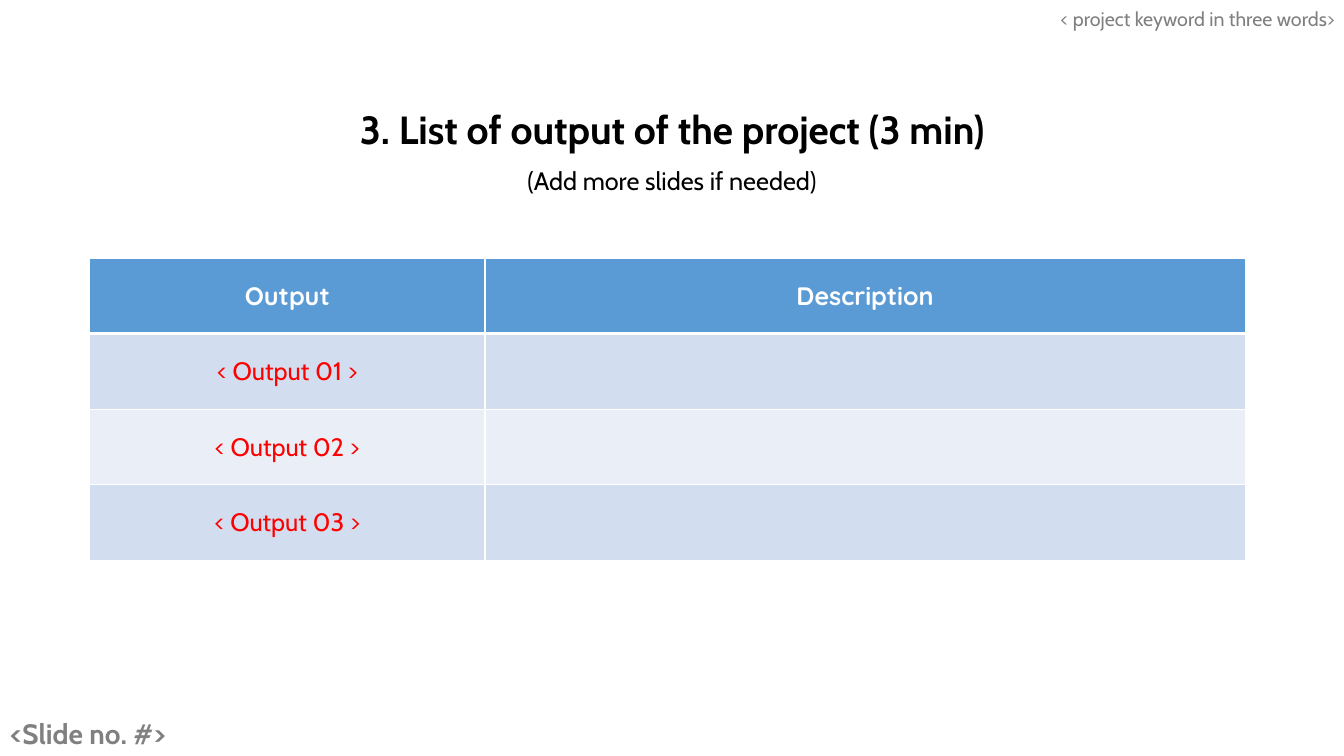
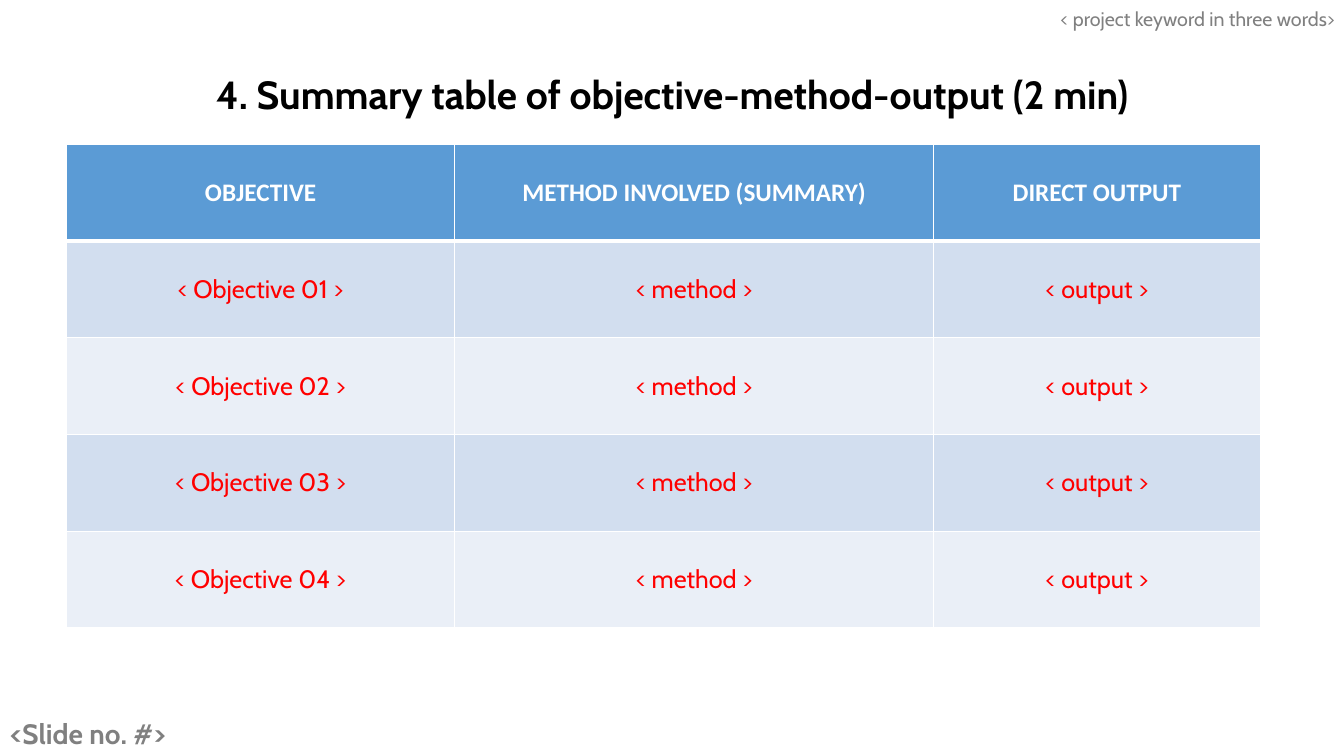
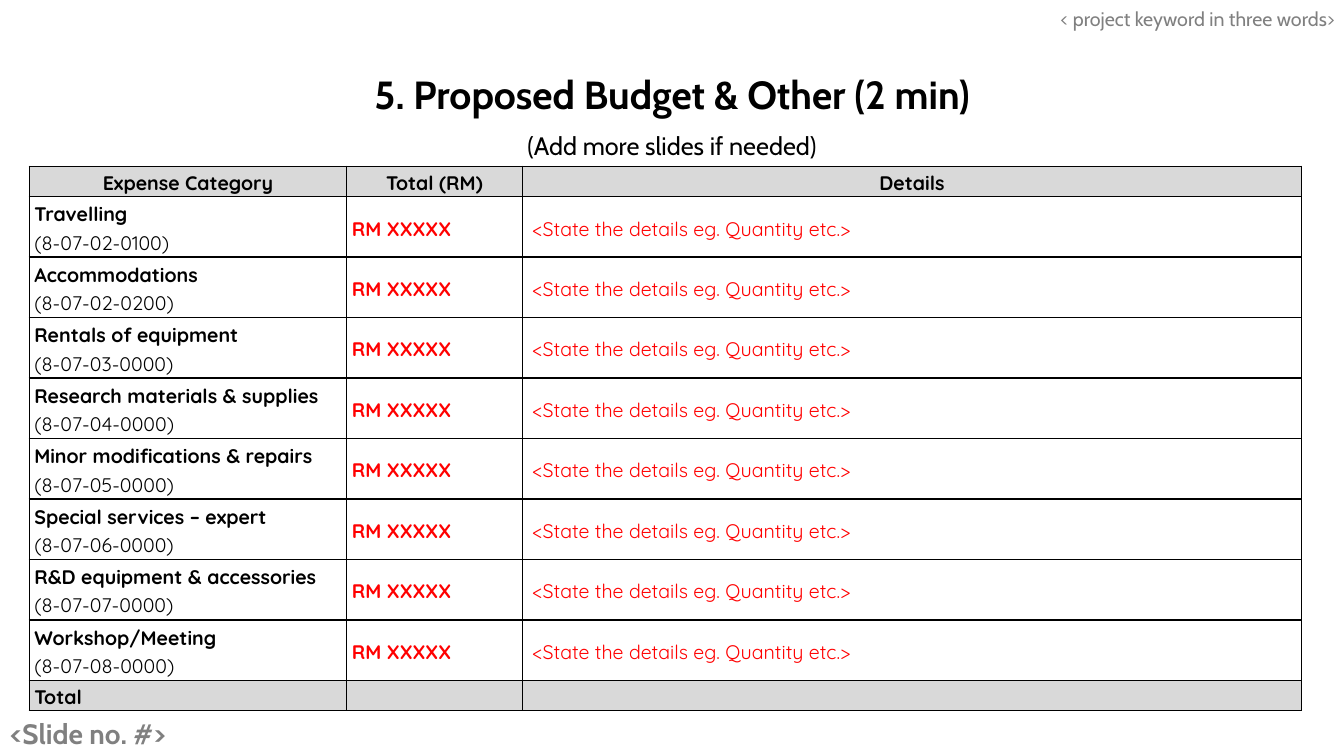
from lxml import etree
from pptx import Presentation
from pptx import util as u
from pptx.dml.color import RGBColor
from pptx.enum import text as t
from pptx.oxml import ns

LEFT, CENTER, RIGHT = t.PP_ALIGN.LEFT, t.PP_ALIGN.CENTER, t.PP_ALIGN.RIGHT
WHITE, BLACK, RED, GREY = "FFFFFF", "000000", "FF0000", "808080"
BLUE, LIGHT_BLUE, PALE_BLUE, SILVER = "5B9BD5", "D2DEEF", "EAEFF7", "D9D9D9"
TITLE_NOTE = "(Add more slides if needed)"


def rgb(hex_code):
    return RGBColor.from_string(hex_code)


def font_style(name, size, color, bold=False):
    return {"name": name, "size": u.Pt(size), "color": color, "bold": bold}


HEADING = font_style("Cabin", 28, BLACK, True)
NOTE = font_style("Cabin", 18, BLACK)
PAGE_MARK = font_style("Cabin", 20, GREY, True)
KEYWORD = font_style("Cabin", 14, GREY)
ENTRY = font_style("Cabin", 18, RED)
BUDGET_LABEL = font_style("Quicksand", 14, BLACK, True)
BUDGET_CODE = font_style("Quicksand", 14, BLACK)
BUDGET_SUM = font_style("Quicksand", 14, RED, True)
BUDGET_DETAIL = font_style("Quicksand", 14, RED)


class Deck:
    BOX_SPACING = {"line_spacing": 1.07, "space_after": u.Pt(8)}

    def __init__(self):
        self.prs = Presentation()
        self.prs.slide_width = u.Inches(13.33)
        self.prs.slide_height = u.Inches(7.5)
        self.slide = None

    def add_slide(self, top, *heading):
        """Start a slide with its title lines and the two marks all slides carry."""
        self.slide = self.prs.slides.add_slide(self.prs.slide_layouts[5])
        title = self.slide.shapes.title
        height = 0.61 if len(heading) == 1 else 1.04
        for side, inches in {"left": 0, "top": top, "width": 13.33, "height": height}.items():
            setattr(title, side, u.Inches(inches))
        self.fill_box(title.text_frame, list(zip(heading, (HEADING, NOTE))), CENTER)
        self.textbox(0, 7.04, 2.45, 0.46, "<Slide no. #>", PAGE_MARK, LEFT)
        self.textbox(4.91, 0, 8.43, 0.35, "< project keyword in three words>", KEYWORD, RIGHT)

    def textbox(self, left, top, width, height, wording, style, align):
        box = self.slide.shapes.add_textbox(*map(u.Inches, (left, top, width, height)))
        self.fill_box(box.text_frame, [(wording, style)], align)

    def fill_box(self, frame, lines, align):
        frame.word_wrap = True
        frame.auto_size = t.MSO_AUTO_SIZE.NONE
        frame.vertical_anchor = t.MSO_ANCHOR.TOP
        self.set_lines(frame, lines, align, self.BOX_SPACING)

    def set_lines(self, frame, lines, align, spacing):
        """Put each (wording, style) pair in a paragraph of its own."""
        for index, (wording, style) in enumerate(lines):
            paragraph = frame.paragraphs[0] if index == 0 else frame.add_paragraph()
            for key, value in {"alignment": align, **spacing}.items():
                setattr(paragraph, key, value)
            run = paragraph.add_run()
            run.text = wording
            for key, value in style.items():
                if key == "color":
                    run.font.color.rgb = rgb(value)
                else:
                    setattr(run.font, key, value)

    def table(self, left, top, widths, heights, rows, fills, body_align, border,
              header_rule=1, spacing=None, margins=None):
        """Draw rows of cells; a cell is a list of (wording, style) lines."""
        frame = self.slide.shapes.add_table(
            len(rows), len(widths),
            *map(u.Inches, (left, top, sum(widths), sum(heights))))
        grid = frame.table
        grid.first_row = grid.horz_banding = False
        for column, width in zip(grid.columns, widths):
            column.width = u.Inches(width)
        for r, (cells, height, fill) in enumerate(zip(rows, heights, fills)):
            grid.rows[r].height = u.Inches(height)
            rules = {"L": 1, "R": 1, "T": header_rule if r == 1 else 1,
                     "B": header_rule if r == 0 else 1}
            for c, lines in enumerate(cells):
                cell = grid.cell(r, c)
                cell.vertical_anchor = t.MSO_ANCHOR.MIDDLE
                for side, inches in (margins or {}).items():
                    setattr(cell, side, u.Inches(inches))
                if margins and r and c == len(widths) - 1:
                    cell.margin_left = u.Inches(0.1)
                align = CENTER if r == 0 else body_align
                self.set_lines(cell.text_frame, lines, align, spacing or {})
                if not lines:
                    ending = cell.text_frame.paragraphs[0]._p.get_or_add_endParaRPr()
                    ending.set("sz", "1400")
                if fill:
                    cell.fill.solid()
                    cell.fill.fore_color.rgb = rgb(fill)
                else:
                    cell.fill.background()
                self.border(cell, border, rules)

    @staticmethod
    def border(cell, color, rules):
        """Rule the cell's sides; lines must come before the fill in the XML."""
        properties = cell._tc.get_or_add_tcPr()
        for position, (side, points) in enumerate(rules.items()):
            line = etree.Element(ns.qn(f"a:ln{side}"), w=str(u.Pt(points)))
            solid = etree.SubElement(line, ns.qn("a:solidFill"))
            etree.SubElement(solid, ns.qn("a:srgbClr"), val=color)
            properties.insert(position, line)

    def banded_table(self, left, top, widths, row_height, header_font, header, entries):
        header_style = font_style(header_font, 18, WHITE, True)
        rows = [[[(label, header_style)] for label in header]]
        rows += [[[(entry, ENTRY)] if entry else [] for entry in row] for row in entries]
        bands = [LIGHT_BLUE if i % 2 == 0 else PALE_BLUE for i in range(len(entries))]
        self.table(left, top, widths, [row_height] * len(rows), rows, [BLUE] + bands,
                   CENTER, WHITE, header_rule=3)

    def budget_table(self, left, top, widths, header, expenses):
        rows = [[[(label, BUDGET_LABEL)] for label in header]]
        rows += [[[(category, BUDGET_LABEL), (f"({code})", BUDGET_CODE)],
                  [("RM XXXXX", BUDGET_SUM)],
                  [("<State the details eg. Quantity etc.>", BUDGET_DETAIL)]]
                 for category, code in expenses]
        rows.append([[("Total", BUDGET_LABEL)], [], []])
        count = len(expenses)
        self.table(left, top, widths, [0.3] + [0.6] * count + [0.3], rows,
                   [SILVER] + [None] * count + [SILVER], LEFT, BLACK,
                   spacing={"line_spacing": 1.15},
                   margins={"margin_left": 0.05, "margin_right": 0.05,
                            "margin_top": 0, "margin_bottom": 0})


def main():
    deck = Deck()

    deck.add_slide(0.96, "3. List of output of the project (3 min)", TITLE_NOTE)
    deck.banded_table(0.89, 2.56, [3.92, 7.54], 0.75, "Quicksand",
                      ["Output", "Description"],
                      [(f"< Output {n:02} >", "") for n in range(1, 4)])

    deck.add_slide(0.61, "4. Summary table of objective-method-output (2 min)")
    deck.banded_table(0.66, 1.43, [3.85, 4.75, 3.24], 0.96, "Calibri",
                      ["OBJECTIVE", "METHOD INVOLVED (SUMMARY)", "DIRECT OUTPUT"],
                      [(f"< Objective {n:02} >", "< method >", "< output >")
                       for n in range(1, 5)])

    deck.add_slide(0.61, "5. Proposed Budget & Other (2 min)", TITLE_NOTE)
    deck.budget_table(0.29, 1.65, [3.15, 1.74, 7.73],
                      ["Expense Category", "Total (RM)", "Details"],
                      [("Travelling", "8-07-02-0100"),
                       ("Accommodations", "8-07-02-0200"),
                       ("Rentals of equipment", "8-07-03-0000"),
                       ("Research materials & supplies", "8-07-04-0000"),
                       ("Minor modifications & repairs", "8-07-05-0000"),
                       ("Special services – expert", "8-07-06-0000"),
                       ("R&D equipment & accessories", "8-07-07-0000"),
                       ("Workshop/Meeting", "8-07-08-0000")])

    deck.prs.save("out.pptx")


if __name__ == "__main__":
    main()
